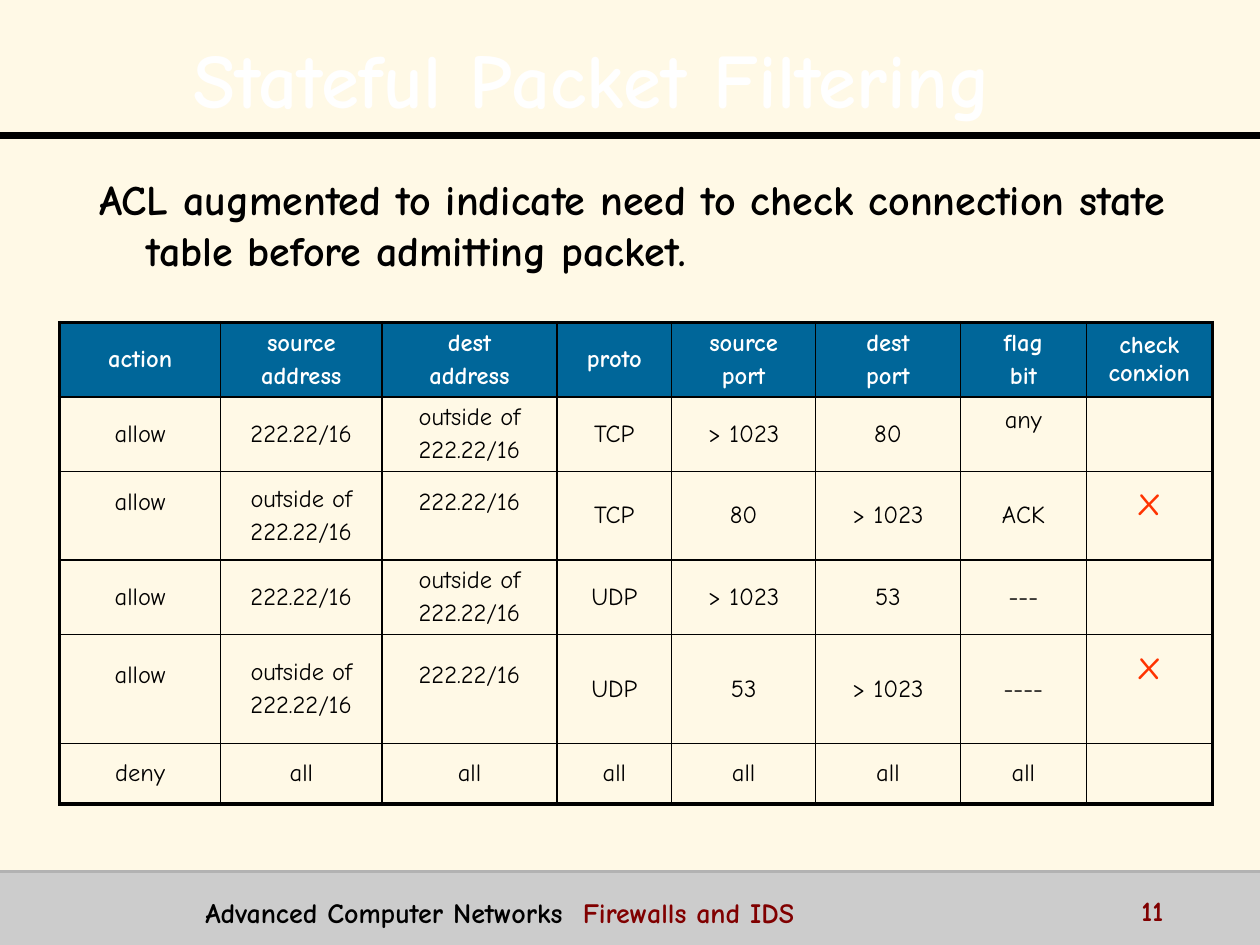
import pptx
import pptx.dml.color
import pptx.enum.shapes
import pptx.enum.text
import pptx.oxml
import pptx.oxml.ns
import pptx.util
from lxml import etree

Cm, Pt = pptx.util.Cm, pptx.util.Pt
RGB = pptx.dml.color.RGBColor.from_string
PP_ALIGN = pptx.enum.text.PP_ALIGN
MIDDLE = pptx.enum.text.MSO_ANCHOR.MIDDLE
qn = pptx.oxml.ns.qn
COLORS = {
    "page": "FFF9E6", "band": "CCCCCC", "band_edge": "B2B2B2", "ink": "000000",
    "header": "006699", "white": "FFFFFF", "mark": "FF3300", "topic": "800000",
}


def add_run(paragraph, text, size, color, bold=True):
    run = paragraph.add_run()
    run.text = text
    run.font.name = "Comic Neue"
    run.font.size = Pt(size)
    run.font.bold = bold
    run.font.color.rgb = RGB(COLORS[color])
    return run


def add_text_frame(left, top, width, height):
    """Add a wrapping text box, measured in cm, and return its frame."""
    frame = slide.shapes.add_textbox(Cm(left), Cm(top), Cm(width), Cm(height)).text_frame
    frame.word_wrap = True
    return frame


prs = pptx.Presentation()
prs.slide_width, prs.slide_height = Cm(25.4), Cm(19.05)
slide = prs.slides.add_slide(prs.slide_layouts[6])
slide.background.fill.solid()
slide.background.fill.fore_color.rgb = RGB(COLORS["page"])

# Footer band and rules
footer_top = 17.57
band = slide.shapes.add_shape(pptx.enum.shapes.MSO_SHAPE.RECTANGLE,
                              0, Cm(footer_top), Cm(25.4), Cm(1.48))
band.shadow.inherit = False
band.fill.solid()
band.fill.fore_color.rgb = RGB(COLORS["band"])
band.line.fill.background()
for y, color, weight in [(2.74, "ink", 4), (footer_top, "band_edge", 2)]:
    rule = slide.shapes.add_connector(pptx.enum.shapes.MSO_CONNECTOR.STRAIGHT,
                                      0, Cm(y), Cm(25.4), Cm(y))
    rule.line.color.rgb = RGB(COLORS[color])
    rule.line.width = Pt(weight)
    etree.SubElement(rule._element.spPr, qn("a:effectLst"))

# Access control list
rules = [
    ["action", "source\naddress", "dest\naddress", "proto", "source\nport",
     "dest\nport", "flag\nbit", "check conxion"],
    ["allow", "222.22/16", "outside of\n222.22/16", "TCP", "> 1023", "80", "any", ""],
    ["allow", "outside of\n222.22/16", "222.22/16", "TCP", "80", "> 1023", "ACK", "x"],
    ["allow", "222.22/16", "outside of\n222.22/16", "UDP", "> 1023", "53", "---", ""],
    ["allow", "outside of\n222.22/16", "222.22/16", "UDP", "53", "> 1023", "----", "x"],
    ["deny"] + ["all"] * 6 + [""],
]
column_widths = [3.25, 3.25, 3.53, 2.31, 2.9, 2.92, 2.54, 2.54]
row_heights = [1.5, 1.5, 1.79, 1.5, 2.2, 1.22]
last_row, last_column = len(row_heights) - 1, len(column_widths) - 1
# Extra bottom margin (cm) of the cells whose text sits above the middle
raised = {(1, 6): 0.55, (2, 0): 0.55, (2, 2): 0.55, (2, 7): 0.55,
          (4, 0): 0.55, (4, 2): 0.55, (4, 7): 0.95}

acl = slide.shapes.add_table(len(row_heights), len(column_widths), Cm(1.2), Cm(6.5),
                             Cm(sum(column_widths)), Cm(sum(row_heights))).table
acl.first_row = acl.horz_banding = False
for column, width in zip(acl.columns, column_widths):
    column.width = Cm(width)
for row, height in zip(acl.rows, row_heights):
    row.height = Cm(height)

for r, entries in enumerate(rules):
    for c, entry in enumerate(entries):
        cell = acl.cell(r, c)
        cell.vertical_anchor = MIDDLE
        cell.margin_top = Cm(0.1)
        cell.margin_bottom = Cm(0.1 + raised.get((r, c), 0))
        outer_edges = {"L": c == 0, "R": c == last_column, "T": r == 0, "B": r == last_row}
        for side, is_outer in outer_edges.items():
            border = etree.SubElement(cell._tc.get_or_add_tcPr(), qn(f"a:ln{side}"),
                                      w=str(Pt(2.25 if is_outer else 1)))
            border_fill = etree.SubElement(border, qn("a:solidFill"))
            etree.SubElement(border_fill, qn("a:srgbClr"), val=COLORS["ink"])
        if r == 0:
            cell.fill.solid()
            cell.fill.fore_color.rgb = RGB(COLORS["header"])
        else:
            cell.fill.background()
        size, color = (24, "mark") if entry == "x" else (14, "white" if r == 0 else "ink")
        for i, line in enumerate(entry.split("\n") if entry else []):
            paragraph = cell.text_frame.paragraphs[0]
            if i:
                paragraph = cell.text_frame.add_paragraph()
                paragraph.space_before = Pt(2.8)
            paragraph.alignment = PP_ALIGN.CENTER
            add_run(paragraph, line, size, color, bold=r == 0)

# Statement with a hanging indent
statement = add_text_frame(1.75, 3.38, 22.25, 2.8).paragraphs[0]
indent = Cm(0.95)
statement._p.get_or_add_pPr().set("marL", str(indent))
statement._p.get_or_add_pPr().set("indent", str(-indent))
add_run(statement, "ACL augmented to indicate need to check connection state table "
                   "before admitting packet.", 24, "ink")

# Title with a text shadow
title_frame = add_text_frame(1.14, 0, 21.59, 2.95)
title_frame.vertical_anchor = MIDDLE
title = title_frame.paragraphs[0]
title.alignment = PP_ALIGN.CENTER
title.line_spacing = 1.1
title_run = add_run(title, "Stateful Packet Filtering", 44, "white")
effects = pptx.oxml.parse_xml(
    '<a:effectLst xmlns:a="http://schemas.openxmlformats.org/drawingml/2006/main">'
    '<a:outerShdw dist="35921" dir="2700000" algn="ctr" rotWithShape="0">'
    f'<a:srgbClr val="{COLORS["ink"]}"/></a:outerShdw></a:effectLst>')
title_run.font._element.find(qn("a:solidFill")).addnext(effects)

# Footer
course = add_text_frame(3.89, 17.93, 18.49, 0.79).paragraphs[0]
add_run(course, "Advanced Computer Networks  ", 16, "ink")
add_run(course, "Firewalls and IDS", 16, "topic")
page_number = add_text_frame(22.76, 17.88, 2.54, 0.64).paragraphs[0]
add_run(page_number, "11", 16, "topic")

prs.save("out.pptx")
